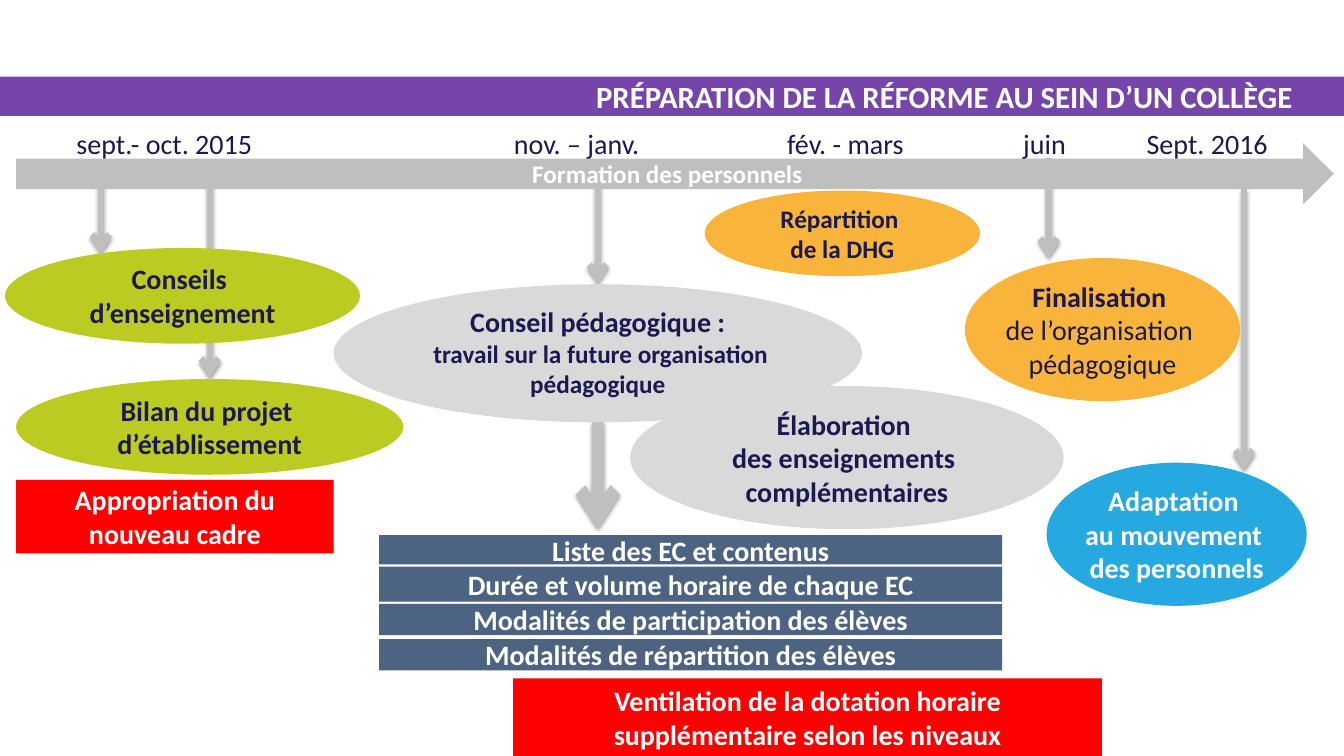
from lxml import etree
from pptx import Presentation
from pptx.dml.color import RGBColor
from pptx.enum.shapes import MSO_CONNECTOR as Link, MSO_SHAPE as Kind
from pptx.enum.text import MSO_ANCHOR as Anchor, MSO_AUTO_SIZE as Fit, PP_ALIGN as Align
from pptx.oxml import parse_xml
from pptx.oxml.ns import nsdecls, qn
from pptx.util import Pt

PX = 9144
WHITE = RGBColor(0xFF, 0xFF, 0xFF)
NAVY = RGBColor(0x1C, 0x18, 0x50)
PURPLE = RGBColor(0x75, 0x45, 0xA9)
SILVER = RGBColor(0xBF, 0xBF, 0xBF)
PALE = RGBColor(0xD9, 0xD9, 0xD9)
SLATE = RGBColor(0x4C, 0x64, 0x82)
RED = RGBColor(0xFF, 0x00, 0x00)
LIME = RGBColor(0xBC, 0xCB, 0x21)
AMBER = RGBColor(0xF9, 0xB5, 0x3B)
BLUE = RGBColor(0x26, 0xA9, 0xE1)

TITLE = "PRÉPARATION DE LA RÉFORME AU SEIN D’UN COLLÈGE"
BAND = (0, 76, 1333, 39)
TRAINING = ("Formation des personnels", (16, 142, 1307, 61))
DATES = [
    ("sept.- oct. 2015", 16, 294),
    ("nov. – janv.", 444, 256),
    ("fév. - mars", 753, 171),
    (" juin ", 972, 128),
    ("Sept. 2016 ", 1125, 151),
]
ARROWS = [
    (100, 181, 252, 4.5),
    (208, 181, 375, 4.5),
    (593, 181, 282, 4.5),
    (1040, 157, 256, 4.5),
    (1234, 187, 466, 4.5),
    (593, 419, 525, 9),
]
TOPICS = [
    ("Liste des EC et contenus", 531, 29),
    ("Durée et volume horaire de chaque EC", 562, 35),
    ("Modalités de participation des élèves", 599, 31),
    ("Modalités de répartition des élèves", 634, 31),
]
GOALS = [
    ("Ventilation de la dotation horaire supplémentaire selon les niveaux", (509, 673, 584, 77)),
    ("Appropriation du nouveau cadre", (16, 476, 315, 73)),
]
EXTRA = (["Élaboration ", "des enseignements ", "complémentaires"], (625, 383, 430, 142), PALE, {})
STEPS = [
    (["Bilan du projet ", "d’établissement"], (16, 376, 384, 95), LIME, {}),
    (["Conseil pédagogique :", (" travail sur la future organisation pédagogique", {"size": 18})],
     (331, 282, 524, 137), PALE, {}),
    (["Conseils ", "d’enseignement"], (5, 246, 352, 95), LIME, {}),
    (["Répartition ", "de la DHG"], (699, 189, 273, 85), AMBER, {"size": 18, "anchor": Anchor.MIDDLE}),
    (["Finalisation ", ("de l’organisation ", {"bold": False}), ("pédagogique", {"bold": False})],
     (957, 256, 273, 142), AMBER, {}),
    (["Adaptation ", "au mouvement ", "des personnels"], (1038, 459, 258, 142), BLUE, {"color": WHITE}),
]


def write(frame, lines, size=20, color=WHITE, bold=True, align=Align.CENTER,
          anchor=Anchor.MIDDLE, inset=None):
    frame.word_wrap = True
    frame.auto_size = Fit.NONE
    frame.vertical_anchor = anchor
    if inset is not None:
        frame.margin_left = frame.margin_right = inset
        frame.margin_top = frame.margin_bottom = inset
    for i, line in enumerate(lines):
        text, own = line if isinstance(line, tuple) else (line, {})
        para = frame.paragraphs[0] if i == 0 else frame.add_paragraph()
        para.alignment = align
        run = para.add_run()
        run.text = text
        run.font.name = "Calibri"
        run.font.size = Pt(own.get("size", size))
        run.font.bold = own.get("bold", bold)
        run.font.color.rgb = color


def scale(box):
    return [n * PX for n in box]


def draw(kind, box, fill):
    shape = slide.shapes.add_shape(kind, *scale(box))
    shape.shadow.inherit = False
    shape.fill.solid()
    shape.fill.fore_color.rgb = fill
    shape.line.fill.background()
    return shape


def oval(lines, box, fill, look):
    style = {"color": NAVY, "anchor": Anchor.TOP, "inset": 0, **look}
    write(draw(Kind.OVAL, box, fill).text_frame, lines, **style)


def arrow(x, top, end, width):
    link = slide.shapes.add_connector(Link.STRAIGHT, *scale((x, top, x, end)))
    link.line.color.rgb = SILVER
    link.line.width = Pt(width)
    props = link.element.spPr
    etree.SubElement(props.find(qn("a:ln")), qn("a:tailEnd"), type="arrow")
    props.append(parse_xml(
        f'<a:effectLst {nsdecls("a")}><a:outerShdw blurRad="40000" dist="20000" '
        'dir="5400000" rotWithShape="0"><a:srgbClr val="000000">'
        '<a:alpha val="38000"/></a:srgbClr></a:outerShdw></a:effectLst>'))


deck = Presentation()
deck.slide_width, deck.slide_height = scale((1333, 750))
slide = deck.slides.add_slide(deck.slide_layouts[5])

draw(Kind.RECTANGLE, BAND, PURPLE)
title = slide.shapes.title
title.left, title.top, title.width, title.height = scale((106, 44, 1186, 102))
write(title.text_frame, [TITLE], size=22, align=Align.RIGHT)
slide.shapes.element.append(title.element)

oval(*EXTRA)
for item in ARROWS:
    arrow(*item)
for text, top, high in TOPICS:
    write(draw(Kind.RECTANGLE, (376, top, 618, high), SLATE).text_frame, [text])
for text, box in GOALS:
    write(draw(Kind.RECTANGLE, box, RED).text_frame, [text])

text, box = TRAINING
write(draw(Kind.RIGHT_ARROW, box, SILVER).text_frame, [text], size=18)
for step in STEPS:
    oval(*step)
for text, left, wide in DATES:
    label = slide.shapes.add_textbox(*scale((left, 123, wide, 39)))
    write(label.text_frame, [text], color=NAVY, bold=False)

deck.save("out.pptx")
